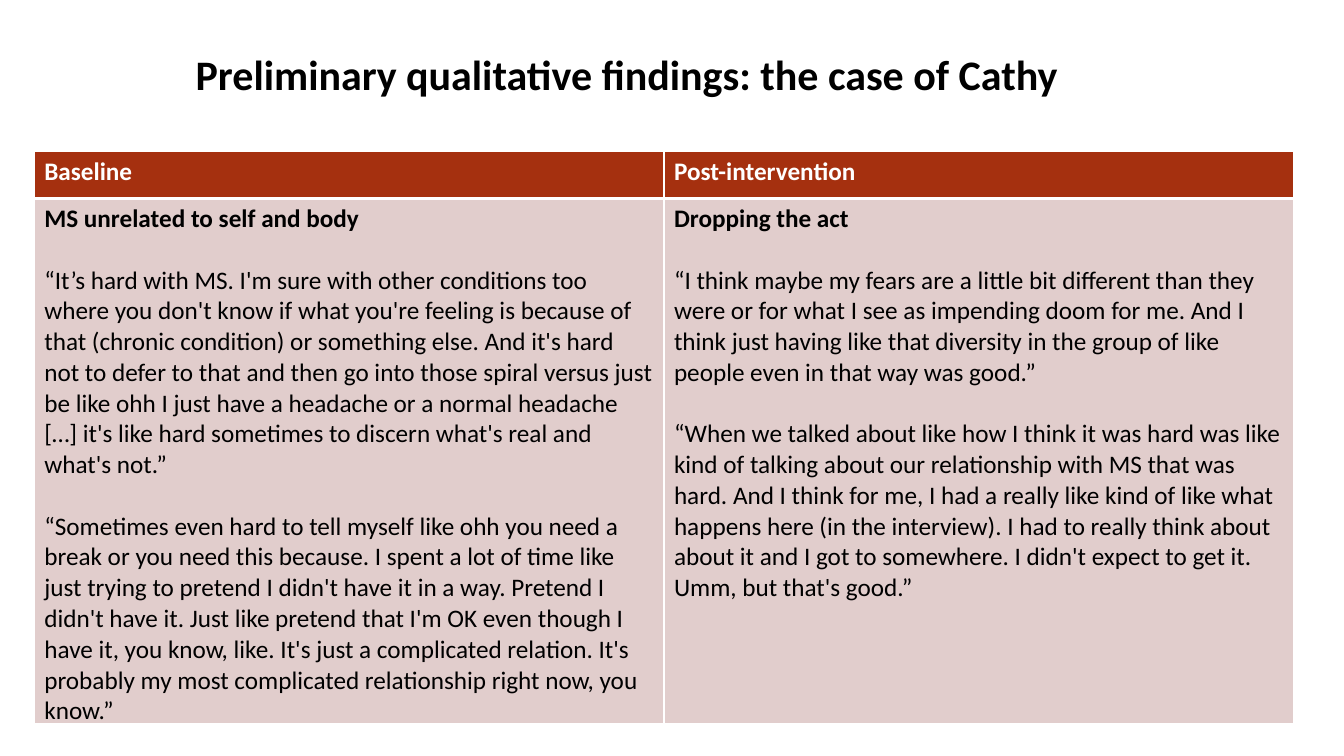
from lxml.etree import SubElement
from pptx import Presentation
from pptx.dml.color import RGBColor
from pptx.enum.text import MSO_ANCHOR, PP_ALIGN
from pptx.oxml.ns import qn
from pptx.util import Inches, Pt

TITLE = "Preliminary qualitative findings: the case of Cathy"
FINDINGS = [
    {
        "stage": "Baseline",
        "theme": "MS unrelated to self and body",
        "quotes": [
            "“It’s hard with MS. I'm sure with other conditions too where you don't know "
            "if what you're feeling is because of that (chronic condition) or something "
            "else. And it's hard not to defer to that and then go into those spiral versus "
            "just be like ohh I just have a headache or a normal headache […] it's like "
            "hard sometimes to discern what's real and what's not.”",
            "“Sometimes even hard to tell myself like ohh you need a break or you need this "
            "because. I spent a lot of time like just trying to pretend I didn't have it in "
            "a way. Pretend I didn't have it. Just like pretend that I'm OK even though I "
            "have it, you know, like. It's just a complicated relation. It's probably my "
            "most complicated relationship right now, you know.”",
        ],
    },
    {
        "stage": "Post-intervention",
        "theme": "Dropping the act",
        "quotes": [
            "“I think maybe my fears are a little bit different than they were or for what "
            "I see as impending doom for me. And I think just having like that diversity in "
            "the group of like people even in that way was good.”",
            "“When we talked about like how I think it was hard was like kind of talking "
            "about our relationship with MS that was hard. And I think for me, I had a "
            "really like kind of like what happens here (in the interview). I had to really "
            "think about about it and I got to somewhere. I didn't expect to get it.\v"
            "Umm, but that's good.”",
        ],
    },
]

BLACK = RGBColor(0x00, 0x00, 0x00)
WHITE = RGBColor(0xFF, 0xFF, 0xFF)
RUST = RGBColor(0xA5, 0x30, 0x0F)
ROSE = RGBColor(0xE1, 0xCD, 0xCC)
FONT = "Calibri"
BODY_SIZE = 18
QUOTE_GAP = 22  # one line of body text, in points

SLIDE_WIDTH, SLIDE_HEIGHT = 13.33, 7.5
TABLE_LEFT, TABLE_TOP, TABLE_WIDTH = 0.34, 1.5, 12.49
ROW_HEIGHTS = (0.47, 5.2)
THIN, THICK = 1, 3


def write(paragraph, text, size=BODY_SIZE, color=BLACK, bold=False, before=0):
    paragraph.text = text
    paragraph.space_before = Pt(before)
    font = paragraph.font
    font.name, font.size, font.bold = FONT, Pt(size), bold
    font.color.rgb = color
    for run in paragraph.runs:
        run.font.name, run.font.size, run.font.bold = FONT, Pt(size), bold
        run.font.color.rgb = color


def style_cell(cell, fill, top, bottom):
    """Give the cell white borders and then its fill, in the order the schema asks."""
    properties = cell._tc.get_or_add_tcPr()
    for side, width in (("L", THIN), ("R", THIN), ("T", top), ("B", bottom)):
        line = SubElement(properties, qn(f"a:ln{side}"), w=str(Pt(width)))
        solid = SubElement(line, qn("a:solidFill"))
        SubElement(solid, qn("a:srgbClr"), val=str(WHITE))
    cell.fill.solid()
    cell.fill.fore_color.rgb = fill


def add_title(slide):
    frame = slide.shapes.add_textbox(
        Inches(0.47), Inches(0.34), Inches(11.5), Inches(0.85)
    ).text_frame
    frame.word_wrap = True
    frame.vertical_anchor = MSO_ANCHOR.MIDDLE
    paragraph = frame.paragraphs[0]
    paragraph.alignment = PP_ALIGN.CENTER
    paragraph.line_spacing = 0.9
    write(paragraph, TITLE, size=30, bold=True)


def add_findings(slide):
    table = slide.shapes.add_table(
        len(ROW_HEIGHTS), len(FINDINGS), Inches(TABLE_LEFT), Inches(TABLE_TOP),
        Inches(TABLE_WIDTH), Inches(sum(ROW_HEIGHTS)),
    ).table
    for row, height in zip(table.rows, ROW_HEIGHTS):
        row.height = Inches(height)
    for column, finding in enumerate(FINDINGS):
        header, body = table.cell(0, column), table.cell(1, column)
        style_cell(header, RUST, THIN, THICK)
        style_cell(body, ROSE, THICK, THIN)
        write(header.text_frame.paragraphs[0], finding["stage"], color=WHITE, bold=True)
        write(body.text_frame.paragraphs[0], finding["theme"], bold=True)
        for quote in finding["quotes"]:
            write(body.text_frame.add_paragraph(), quote, before=QUOTE_GAP)


def main():
    presentation = Presentation()
    presentation.slide_width = Inches(SLIDE_WIDTH)
    presentation.slide_height = Inches(SLIDE_HEIGHT)
    slide = presentation.slides.add_slide(presentation.slide_layouts[6])
    add_title(slide)
    add_findings(slide)
    presentation.save("out.pptx")


if __name__ == "__main__":
    main()
